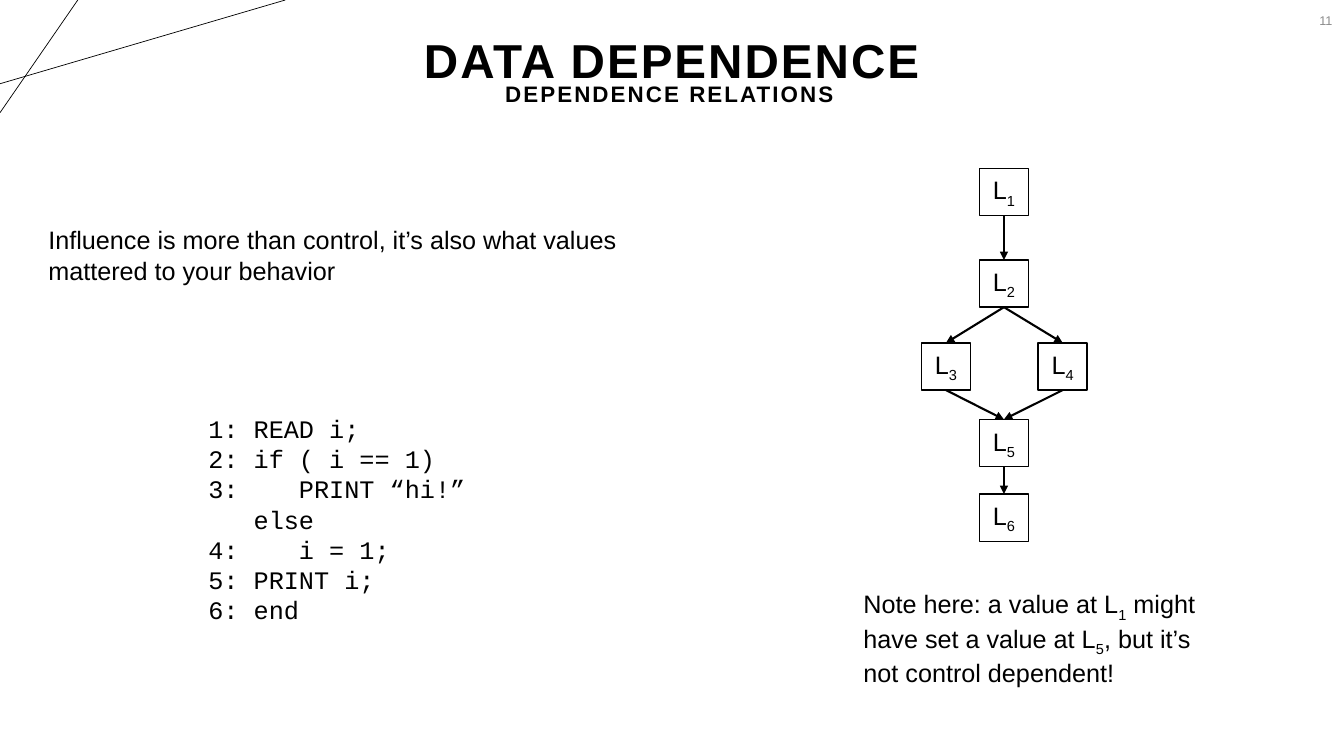
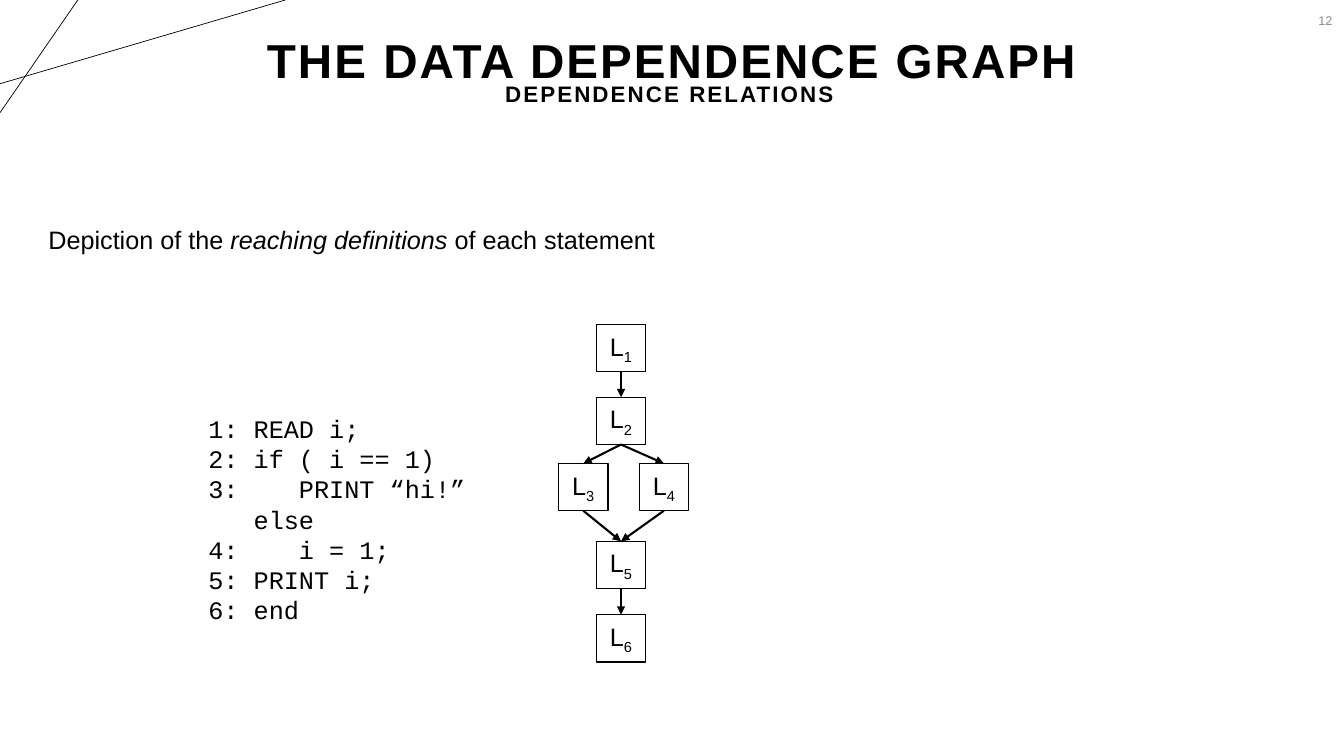
from lxml import etree
from pptx import Presentation
from pptx.dml.color import RGBColor
from pptx.enum.shapes import MSO_CONNECTOR, MSO_SHAPE
from pptx.enum.text import MSO_ANCHOR, MSO_AUTO_SIZE, PP_ALIGN
from pptx.oxml.ns import qn
from pptx.util import Cm, Pt

STRAIGHT = MSO_CONNECTOR.STRAIGHT
RECTANGLE = MSO_SHAPE.RECTANGLE
MIDDLE = MSO_ANCHOR.MIDDLE
GROW = MSO_AUTO_SIZE.SHAPE_TO_FIT_TEXT
LEFT, CENTER, RIGHT = PP_ALIGN.LEFT, PP_ALIGN.CENTER, PP_ALIGN.RIGHT

COLORS = {"ink": "000000", "paper": "FFFFFF", "number": "8C8C8C"}
SANS, MONO = "Arial", "Courier New"
SUBTITLE = "DEPENDENCE RELATIONS"
CODE = [
    "1: READ i;",
    "2: if ( i == 1)",
    "3:    PRINT “hi!”",
    "   else",
    "4:    i = 1;",
    "5: PRINT i;",
    "6: end",
]
EDGES = [(1, 2), (2, 3), (2, 4), (3, 5), (4, 5), (5, 6)]
SIDES = {3: "left", 4: "right"}
NODE_WIDTH, NODE_HEIGHT = 1.24, 1.19
CORNER_LINES = [(0, 2.11, 7.19, 0), (1.96, 0, 0, 2.84)]

SLIDES = [
    {
        "number": 11,
        "title": "DATA DEPENDENCE",
        "lead": [("Influence is more than control, it’s also what values "
                  "mattered to your behavior", "")],
        "lead_height": 1.8,
        "note": [("Note here: a value at L", ""), ("1", "sub"),
                 (" might have set a value at L", ""), ("5", "sub"),
                 (", but it’s not control dependent!", "")],
        "centers": {"middle": 25.3, "left": 23.84, "right": 26.78},
        "tops": [4.24, 6.55, 8.64, 8.64, 10.57, 12.45],
    },
    {
        "number": 12,
        "title": "THE DATA DEPENDENCE GRAPH",
        "lead": [("Depiction of the ", ""), ("reaching definitions", "italic"),
                 (" of each statement", "")],
        "lead_height": 1.02,
        "note": [],
        "centers": {"middle": 15.65, "left": 14.7, "right": 16.73},
        "tops": [8.18, 10.01, 11.68, 11.68, 13.64, 15.49],
    },
]


def color(name):
    return RGBColor.from_string(COLORS[name])


def fill_paragraph(para, spans, size=18, font=SANS, ink="ink", bold=False,
                   align=LEFT, tracking=0):
    para.alignment = align
    for text, style in spans:
        span = para.add_run()
        span.text = text
        span.font.name = font
        span.font.size = Pt(size)
        span.font.bold = bold
        span.font.color.rgb = color(ink)
        properties = span._r.get_or_add_rPr()
        if style == "italic":
            span.font.italic = True
        if style == "sub":
            properties.set("baseline", "-25000")
        if tracking:
            properties.set("spc", str(tracking))


def add_text(page, place, paragraphs, middle=False, line_spacing=None, **style):
    box = page.shapes.add_textbox(*[Cm(length) for length in place])
    frame = box.text_frame
    frame.word_wrap = True
    if middle:
        frame.vertical_anchor = MIDDLE
    else:
        frame.auto_size = GROW
    for index, spans in enumerate(paragraphs):
        para = frame.add_paragraph() if index else frame.paragraphs[0]
        para.line_spacing = line_spacing
        fill_paragraph(para, spans, **style)


def add_line(page, ends, width):
    line = page.shapes.add_connector(STRAIGHT, *[Cm(length) for length in ends])
    line.line.color.rgb = color("ink")
    line.line.width = Pt(width)
    etree.SubElement(line._element.spPr, qn("a:effectLst"))
    return line


def add_arrow(page, source, target):
    arrow = add_line(page, (0, 0, 0, 0), 1.5)
    arrow.begin_connect(source, 2)
    arrow.end_connect(target, 0)
    etree.SubElement(arrow.line._get_or_add_ln(), qn("a:tailEnd"), type="triangle")


def add_node(page, label, center, top):
    node = page.shapes.add_shape(RECTANGLE, Cm(center - NODE_WIDTH / 2), Cm(top),
                                 Cm(NODE_WIDTH), Cm(NODE_HEIGHT))
    node.shadow.inherit = False
    node.fill.solid()
    node.fill.fore_color.rgb = color("paper")
    node.line.color.rgb = color("ink")
    node.line.width = Pt(1)
    frame = node.text_frame
    frame.margin_left = frame.margin_right = 0
    frame.vertical_anchor = MIDDLE
    fill_paragraph(frame.paragraphs[0], [("L", ""), (str(label), "sub")], align=CENTER)
    return node


def add_graph(page, centers, tops):
    nodes = {}
    for label, top in enumerate(tops, 1):
        center = centers[SIDES.get(label, "middle")]
        nodes[label] = add_node(page, label, center, top)
    for source, target in EDGES:
        add_arrow(page, nodes[source], nodes[target])


def add_frame(page, number, title):
    for ends in CORNER_LINES:
        add_line(page, ends, 0.5)
    add_text(page, (26.21, 0, 7.62, 1.02), [[(str(number), "")]], middle=True,
             size=9, ink="number", align=RIGHT)
    headings = [(title, 34, 0.03, -0.25), (SUBTITLE, 16, -0.03, 0.56)]
    for text, size, left, top in headings:
        add_text(page, (left, top, 33.81, 3.68), [[(text, "")]], middle=True,
                 line_spacing=0.9, size=size, bold=True, align=CENTER, tracking=150)


def main():
    deck = Presentation()
    deck.slide_width, deck.slide_height = Cm(33.87), Cm(19.05)
    for content in SLIDES:
        page = deck.slides.add_slide(deck.slide_layouts[6])
        add_frame(page, content["number"], content["title"])
        add_text(page, (5, 10.29, 8.89, 5.64), [[(row, "")] for row in CODE], font=MONO)
        add_text(page, (0.97, 5.54, 16.94, content["lead_height"]), [content["lead"]])
        if content["note"]:
            add_text(page, (21.51, 14.71, 9.4, 2.57), [content["note"]])
        add_graph(page, content["centers"], content["tops"])
    deck.save("out.pptx")


if __name__ == "__main__":
    main()
